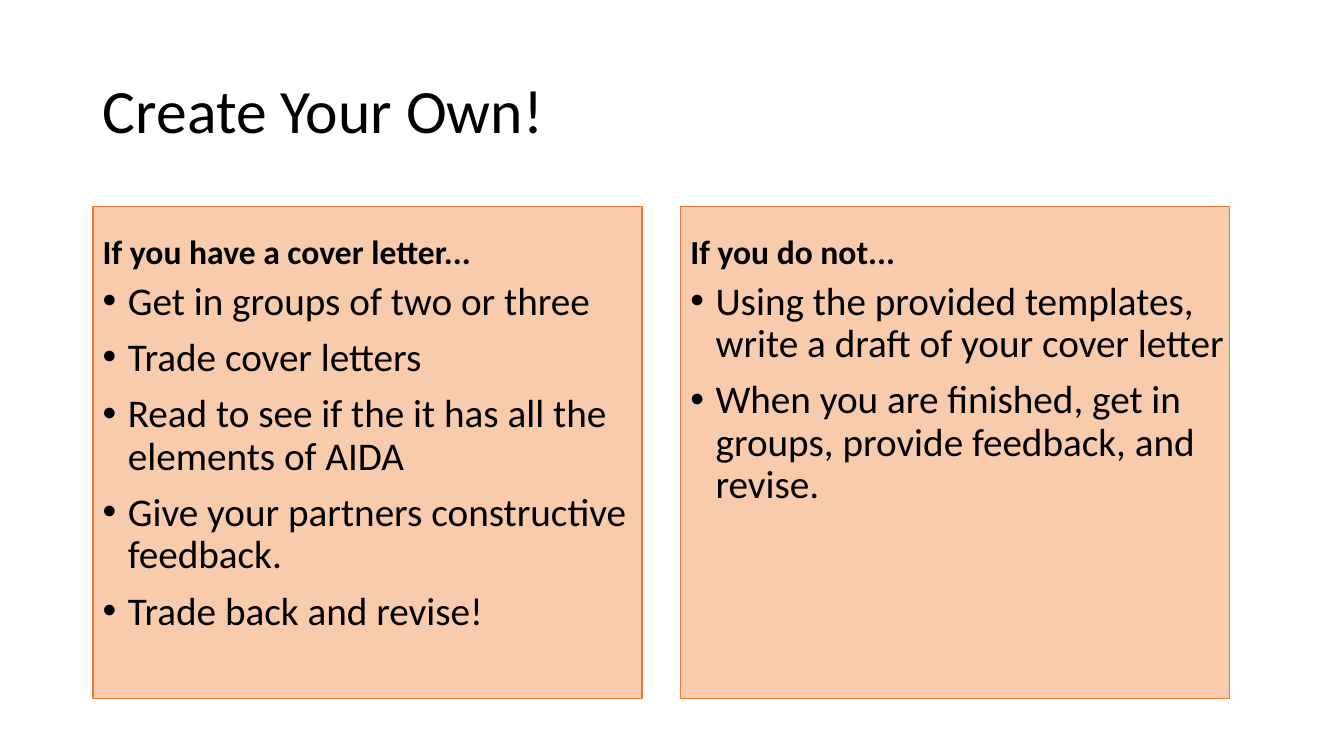
import pptx
import pptx.util
import pptx.dml.color
import pptx.enum.shapes
import pptx.enum.text
import pptx.oxml.ns
import lxml.etree

Cm, Pt = pptx.util.Cm, pptx.util.Pt
ANCHOR = pptx.enum.text.MSO_ANCHOR
COLORS = {"text": "000000", "panel": "F8CBAD", "edge": "ED7D31"}
PANELS = [
    (2.34, 14.33, "If you have a cover letter...", [
        "Get in groups of two or three",
        "Trade cover letters",
        "Read to see if the it has all the elements of AIDA",
        "Give your partners constructive feedback.",
        "Trade back and revise!",
    ]),
    (17.15, 14.4, "If you do not...", [
        "Using the provided templates, write a draft of your cover letter",
        "When you are finished, get in groups, provide feedback, and revise.",
    ]),
]


def color(name):
    """Return the named colour."""
    return pptx.dml.color.RGBColor.from_string(COLORS[name])


def style(para, size, bold=False):
    """Set the line spacing and font of a paragraph."""
    para.line_spacing = 0.9
    font = para.font
    font.name, font.size, font.bold = "Calibri", Pt(size), bold
    font.color.rgb = color("text")


def bullet(para):
    """Give a paragraph a hanging bullet."""
    props = para._p.get_or_add_pPr()
    props.set("marL", str(Cm(0.635)))
    props.set("indent", str(-Cm(0.635)))
    qn = pptx.oxml.ns.qn
    lxml.etree.SubElement(props, qn("a:buFont"), typeface="Arial")
    lxml.etree.SubElement(props, qn("a:buChar"), char="•")


def title(slide, text, left, top, width, height):
    """Place the slide title in its box."""
    shape = slide.shapes.title
    shape.left, shape.top = Cm(left), Cm(top)
    shape.width, shape.height = Cm(width), Cm(height)
    frame = shape.text_frame
    frame.text = text
    frame.vertical_anchor = ANCHOR.MIDDLE
    para = frame.paragraphs[0]
    para.alignment = pptx.enum.text.PP_ALIGN.LEFT
    style(para, 44)


def textbox(slide, left, top, width, height, anchor):
    """Add a wrapping text box and return its frame."""
    box = slide.shapes.add_textbox(Cm(left), Cm(top), Cm(width), Cm(height))
    frame = box.text_frame
    frame.word_wrap = True
    frame.vertical_anchor = anchor
    return frame


def panel(slide, head, items, span, left, top, width, height):
    """Draw a filled panel with a heading and a bullet list."""
    rect = slide.shapes.add_shape(
        pptx.enum.shapes.MSO_SHAPE.RECTANGLE,
        Cm(left), Cm(top), Cm(width), Cm(height))
    rect.shadow.inherit = False
    rect.fill.solid()
    rect.fill.fore_color.rgb = color("panel")
    rect.line.color.rgb = color("edge")
    rect.line.width = Pt(1)

    frame = textbox(slide, left, top - 0.53, span, 2.29, ANCHOR.BOTTOM)
    frame.text = head
    style(frame.paragraphs[0], 24, True)

    frame = textbox(slide, left, top + 1.75, span, 10.24, ANCHOR.TOP)
    frame.text = "\n".join(items)
    for i, para in enumerate(frame.paragraphs):
        bullet(para)
        style(para, 28)
        if i:
            para.space_before = Pt(10)


def main():
    """Build and save the slide."""
    deck = pptx.Presentation()
    deck.slide_width, deck.slide_height = Cm(33.87), Cm(19.05)
    slide = deck.slides.add_slide(deck.slide_layouts.get_by_name("Title Only"))
    title(slide, "Create Your Own!", 2.34, 1.02, 29.21, 3.68)
    for left, span, head, items in PANELS:
        panel(slide, head, items, span, left, 5.21, 13.84, 12.4)
    deck.save("out.pptx")


if __name__ == "__main__":
    main()
